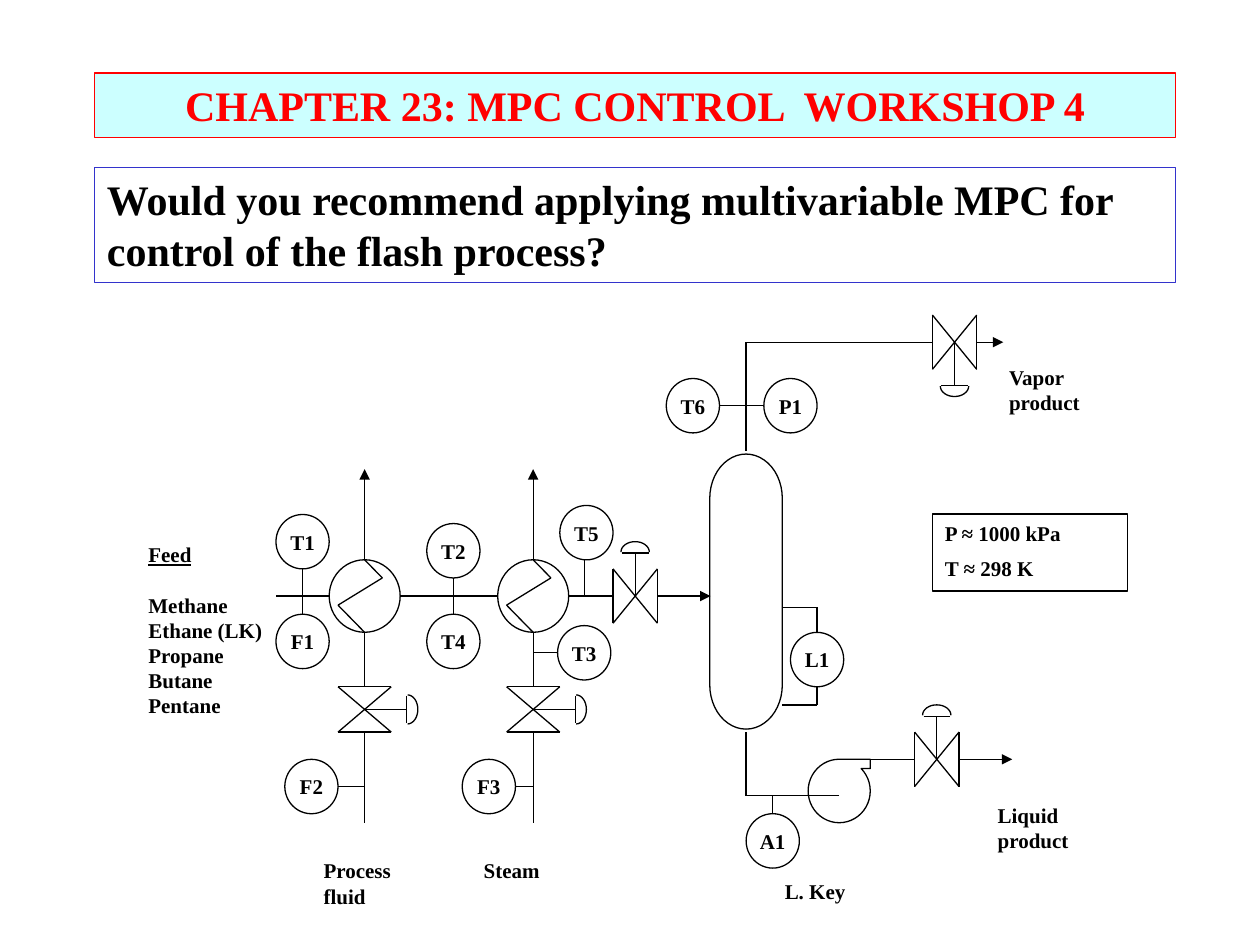
import math

from lxml import etree
from pptx import Presentation
from pptx import util as u
from pptx.dml.color import RGBColor
from pptx.enum import shapes, text
from pptx.oxml.ns import qn

W, H = u.Inches(10), u.Inches(7.5)
FONT = "Times New Roman"
BLACK = "000000"

# Drawing grid of the flow diagram
X0, Y0 = 2.19, 2.5
COL = (7.4 - X0) / 74
ROW = (6.53 - Y0) / 56


def color(value):
    return RGBColor.from_string(value)


def grid(c, r):
    return u.Inches(X0 + c * COL), u.Inches(Y0 + r * ROW)


def share(x, y, w, h):
    """Percentages of the slide's size to lengths."""
    return [int(size * v / 100) for size, v in zip((W, H, W, H), (x, y, w, h))]


def write(sp, lines, size=12, ink=BLACK, align=text.PP_ALIGN.LEFT, wrap=True,
          anchor=text.MSO_ANCHOR.TOP, gaps=(), underlined=()):
    """Put one paragraph per line; gaps gives points before a paragraph."""
    tf = sp.text_frame
    tf.word_wrap, tf.vertical_anchor = wrap, anchor
    for i, line in enumerate(lines):
        p = tf.paragraphs[0] if i == 0 else tf.add_paragraph()
        p.alignment = align
        if i in gaps:
            p.space_before = u.Pt(gaps[i])
        r = p.add_run()
        r.text = line
        r.font.name, r.font.size, r.font.bold = FONT, u.Pt(size), True
        r.font.color.rgb = color(ink)
        if line in underlined:
            r.font.underline = True


def style(sp, line=BLACK, fill=None):
    sp.shadow.inherit = False
    sp.line.color.rgb, sp.line.width = color(line), u.Pt(0.75)
    if fill:
        sp.fill.solid()
        sp.fill.fore_color.rgb = color(fill)
    else:
        sp.fill.background()


def panel(s, box, lines, line=BLACK, fill=None, **fmt):
    sp = s.shapes.add_shape(shapes.MSO_SHAPE.RECTANGLE, *share(*box))
    style(sp, line, fill)
    write(sp, lines, **fmt)


def label(s, box, lines, **fmt):
    write(s.shapes.add_textbox(*share(*box)), lines, **fmt)


def unit(s, kind, c, r, cols, rows):
    sp = s.shapes.add_shape(kind, *grid(c, r), u.Inches(cols * COL), u.Inches(rows * ROW))
    style(sp)
    return sp


def pipe(s, *points, arrow=False):
    """Straight lines through grid points, with an optional final arrowhead."""
    for a, b in zip(points, points[1:]):
        line = s.shapes.add_connector(shapes.MSO_CONNECTOR.STRAIGHT, *grid(*a), *grid(*b))
        line.line.color.rgb, line.line.width = color(BLACK), u.Pt(0.75)
        pr = line._element.spPr
        if arrow and b == points[-1]:
            etree.SubElement(pr.find(qn("a:ln")), qn("a:tailEnd"), type="triangle")
        etree.SubElement(pr, qn("a:effectLst"))


def valve(s, c, r, dx, dy):
    """Control valve whose actuator points in direction (dx, dy)."""
    def at(along, across):
        return c + dx * along - dy * across, r + dy * along + dx * across

    for side in (-2.5, 2.5):
        pipe(s, at(-3, side), at(3, side))
        pipe(s, at(-3, side), at(3, -side))
    pipe(s, at(0, 0), at(4.75, 0))
    pipe(s, at(4.75, -1.5), at(4.75, 1.5))
    angles = [math.pi * i / 16 for i in range(17)]
    dome = [grid(*at(4.85 + 1.15 * math.sin(a), 1.6 * math.cos(a))) for a in angles]
    fb = s.shapes.build_freeform(*dome[0])
    fb.add_line_segments(dome[1:], close=False)
    style(fb.convert_to_shape())


def exchanger(s, c):
    """Heat exchanger with its heating stream and valve."""
    unit(s, shapes.MSO_SHAPE.OVAL, c - 4, 27, 8, 8)
    pipe(s, (c, 35), (c - 3, 32), (c + 2, 29), (c, 27))
    pipe(s, (c, 27), (c, 17), arrow=True)
    pipe(s, (c, 35), (c, 41))
    valve(s, c, 43.5, 1, 0)
    pipe(s, (c, 46), (c, 56))


def instrument(s, name, c, r):
    sp = unit(s, shapes.MSO_SHAPE.OVAL, c, r, 6, 6)
    write(sp, [name], align=text.PP_ALIGN.CENTER, wrap=False, anchor=text.MSO_ANCHOR.MIDDLE)


def main():
    prs = Presentation()
    prs.slide_width, prs.slide_height = W, H
    s = prs.slides.add_slide(prs.slide_layouts[6])

    # Title and question
    panel(s, (7.5, 7.73, 85.8, 6.8), ["CHAPTER 23: MPC CONTROL  WORKSHOP 4"],
          line="FF0000", fill="CCFFFF", size=24, ink="FF0000", align=text.PP_ALIGN.CENTER)
    panel(s, (7.5, 17.73, 85.8, 12.13),
          ["Would you recommend applying multivariable MPC for control of the flash process?"],
          line="3333CC", size=24)

    # Flash drum (turned upright) and pump
    drum = unit(s, shapes.MSO_SHAPE.FLOWCHART_TERMINATOR, 53 - 15.5, 30.5 - 4, 31, 8)
    drum.rotation = 270
    pump = unit(s, shapes.MSO_SHAPE.FLOWCHART_SEQUENTIAL_ACCESS_STORAGE, 60, 49, 7, 7)
    pump._element.spPr.find(qn("a:xfrm")).set("flipV", "1")

    # Heat exchangers
    for c in (10, 29):
        exchanger(s, c)

    # Feed line
    pipe(s, (6, 31), (0, 31))
    pipe(s, (25, 31), (14, 31))
    pipe(s, (33, 31), (38, 31))
    valve(s, 40.5, 31, 0, -1)
    pipe(s, (43, 31), (49, 31), arrow=True)

    # Vapor line
    pipe(s, (53, 15), (53, 3), (74, 3))
    valve(s, 76.5, 3, 0, 1)
    pipe(s, (79, 3), (82, 3), arrow=True)

    # Liquid line
    pipe(s, (63.5, 53), (53, 53), (53, 46))
    pipe(s, (67, 49), (72, 49))
    valve(s, 74.5, 49, 0, -1)
    pipe(s, (77, 49), (83, 49), arrow=True)

    # Instruments and the lines that tie them to the process
    for name, c, r in (("F1", 0, 33), ("F2", 1, 49), ("F3", 21, 49), ("T1", 0, 22),
                       ("T2", 17, 23), ("T3", 31.75, 34.25), ("T5", 32, 21),
                       ("T4", 17, 33), ("T6", 44, 7), ("P1", 55, 7),
                       ("L1", 58, 35), ("A1", 53, 55)):
        instrument(s, name, c, r)
    for tap in (((3, 28), (3, 31)), ((3, 33), (3, 31)),
                ((20, 29), (20, 31)), ((20, 33), (20, 31)),
                ((34.8, 27), (34.8, 31)), ((31.75, 37.25), (29, 37.25)),
                ((7, 52), (10, 52)), ((27, 52), (29, 52)), ((56, 55), (56, 53)),
                ((61, 35), (61, 32.25), (57, 32.25)), ((61, 41), (61, 43), (57, 43)),
                ((50, 10), (53, 10)), ((55, 10), (53, 10))):
        pipe(s, *tap)

    # Stream labels and operating conditions
    label(s, (10.8, 56.67, 11, 20),
          ["Feed", "Methane", "Ethane (LK)", "Propane", "Butane", "Pentane"],
          wrap=False, gaps={1: 14.4}, underlined=("Feed",))
    label(s, (79.1, 37.87, 12.1, 6.67), ["Vapor", "product"])
    label(s, (78.2, 84.27, 12.1, 6.67), ["Liquid", "product"])
    label(s, (24.7, 90.13, 7.4, 6.67), ["Process", "fluid"], wrap=False)
    label(s, (37.4, 90.13, 6.5, 4), ["Steam"], wrap=False)
    label(s, (61.3, 92.27, 6.8, 4), ["L. Key"], wrap=False)
    panel(s, (74, 54.4, 15.5, 8.13), ["P ≈ 1000 kPa", "T ≈ 298 K"], gaps={1: 6})

    prs.save("out.pptx")


if __name__ == "__main__":
    main()
